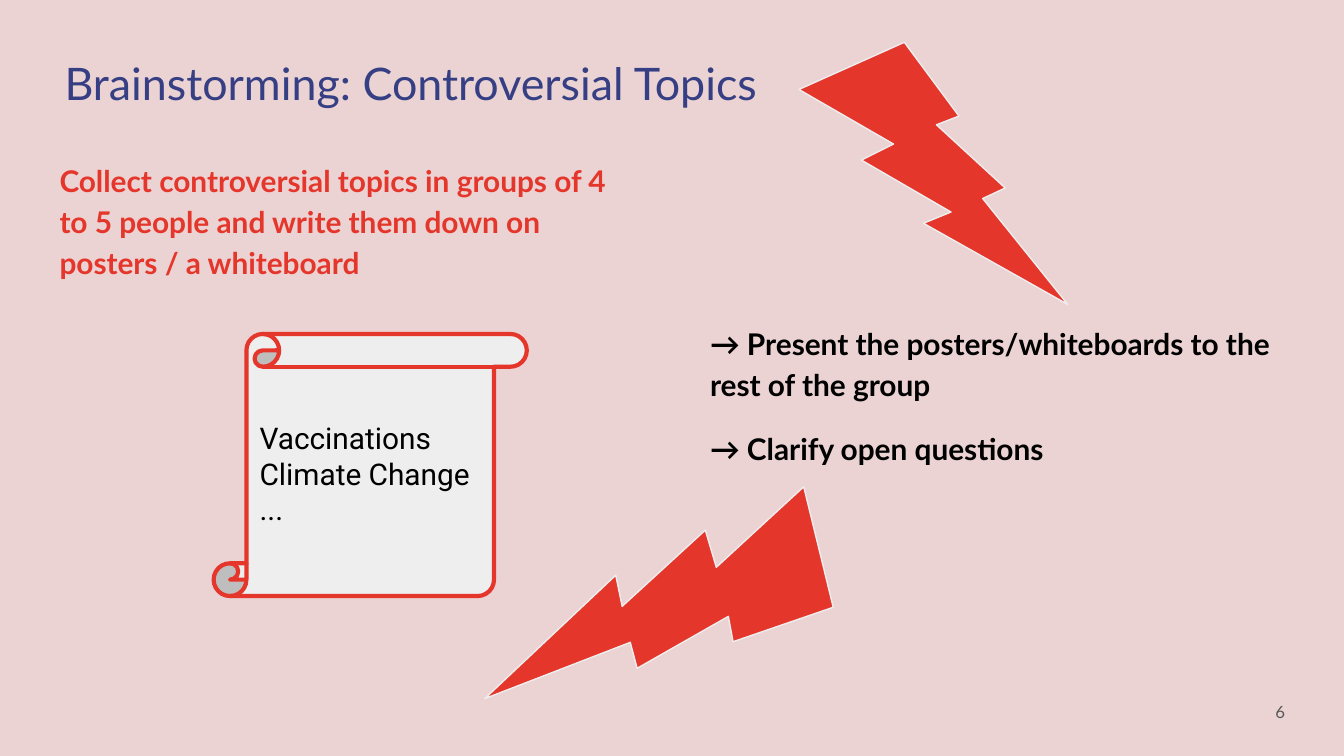
from dataclasses import dataclass

from pptx import Presentation
from pptx.dml.color import RGBColor
from pptx.enum.shapes import MSO_SHAPE
from pptx.enum.text import MSO_ANCHOR, MSO_AUTO_SIZE, PP_ALIGN
from pptx.util import Pt

PX = 4572  # 200 px to the inch
COLORS = {
    "back": "EBD3D3",
    "title": "363F83",
    "red": "E5362B",
    "pale": "EEEEEE",
    "black": "000000",
    "grey": "595959",
}


@dataclass
class Box:
    left: int
    top: int
    width: int
    height: int

    def emu(self) -> tuple:
        return tuple(n * PX for n in (self.left, self.top, self.width, self.height))


@dataclass
class Style:
    size: int
    color: str
    font: str = "Lato"
    bold: bool = False
    align: PP_ALIGN = PP_ALIGN.LEFT
    anchor: MSO_ANCHOR = MSO_ANCHOR.TOP
    lead: float = 1.0
    gap: int = 0


@dataclass
class Note:
    box: Box
    text: str
    style: Style


@dataclass
class Form:
    kind: MSO_SHAPE
    box: Box
    fill: str
    line: str
    weight: float
    turn: float = 0


def rgb(name: str) -> RGBColor:
    return RGBColor.from_string(COLORS[name])


def write(shape, text: str, style: Style) -> None:
    frame = shape.text_frame
    frame.text = text
    frame.word_wrap = True
    frame.auto_size = MSO_AUTO_SIZE.NONE
    frame.vertical_anchor = style.anchor
    frame.margin_left = frame.margin_right = 20 * PX
    frame.margin_top = frame.margin_bottom = 20 * PX
    for i, para in enumerate(frame.paragraphs):
        para.alignment = style.align
        para.line_spacing = style.lead
        para.space_before = Pt(style.gap if i else 0)
        for run in para.runs:
            run.font.name = style.font
            run.font.size = Pt(style.size)
            run.font.bold = style.bold
            run.font.color.rgb = rgb(style.color)


def draw(slide, form: Form):
    shape = slide.shapes.add_shape(form.kind, *form.box.emu())
    shape.rotation = form.turn
    shape.shadow.inherit = False
    shape.fill.solid()
    shape.fill.fore_color.rgb = rgb(form.fill)
    shape.line.color.rgb = rgb(form.line)
    shape.line.width = Pt(form.weight)
    return shape


MID = MSO_ANCHOR.MIDDLE
NOTES = [
    Note(Box(69, 214, 874, 762),
         "Collect controversial topics in groups of 4 to 5 people "
         "and write them down on posters / a whiteboard",
         Style(16, "red", bold=True, lead=1.15)),
    Note(Box(1812, 1016, 120, 86), "6",
         Style(9, "grey", align=PP_ALIGN.RIGHT, anchor=MID)),
    Note(Box(1037, 360, 874, 450),
         "→ Present the posters/whiteboards to the rest of the group\n"
         "→ Clarify open questions",
         Style(16, "black", bold=True, anchor=MID, lead=1.15, gap=12)),
]
BOLTS = [
    Form(MSO_SHAPE.LIGHTNING_BOLT, Box(1189, 63, 400, 390), "red", "pale", 0.75),
    Form(MSO_SHAPE.LIGHTNING_BOLT, Box(791, 656, 418, 472), "red", "pale", 0.75, 103.6),
]
SCROLL = Form(MSO_SHAPE.VERTICAL_SCROLL, Box(318, 497, 466, 390), "pale", "red", 2.25)


def main() -> None:
    deck = Presentation()
    deck.slide_width, deck.slide_height = 2000 * PX, 1125 * PX
    slide = deck.slides.add_slide(deck.slide_layouts[5])
    slide.background.fill.solid()
    slide.background.fill.fore_color.rgb = rgb("back")

    # Title
    title = slide.shapes.title
    title.left, title.top, title.width, title.height = Box(76, 63, 1488, 126).emu()
    write(title, "Brainstorming: Controversial Topics", Style(24, "title"))

    # Task, page number and next steps
    for note in NOTES:
        write(slide.shapes.add_textbox(*note.box.emu()), note.text, note.style)

    # Lightning bolts
    for bolt in BOLTS:
        draw(slide, bolt)

    # Scroll with sample topics
    write(draw(slide, SCROLL), "Vaccinations\nClimate Change\n...",
          Style(16, "black", font="Roboto", anchor=MID))

    deck.save("out.pptx")


if __name__ == "__main__":
    main()
